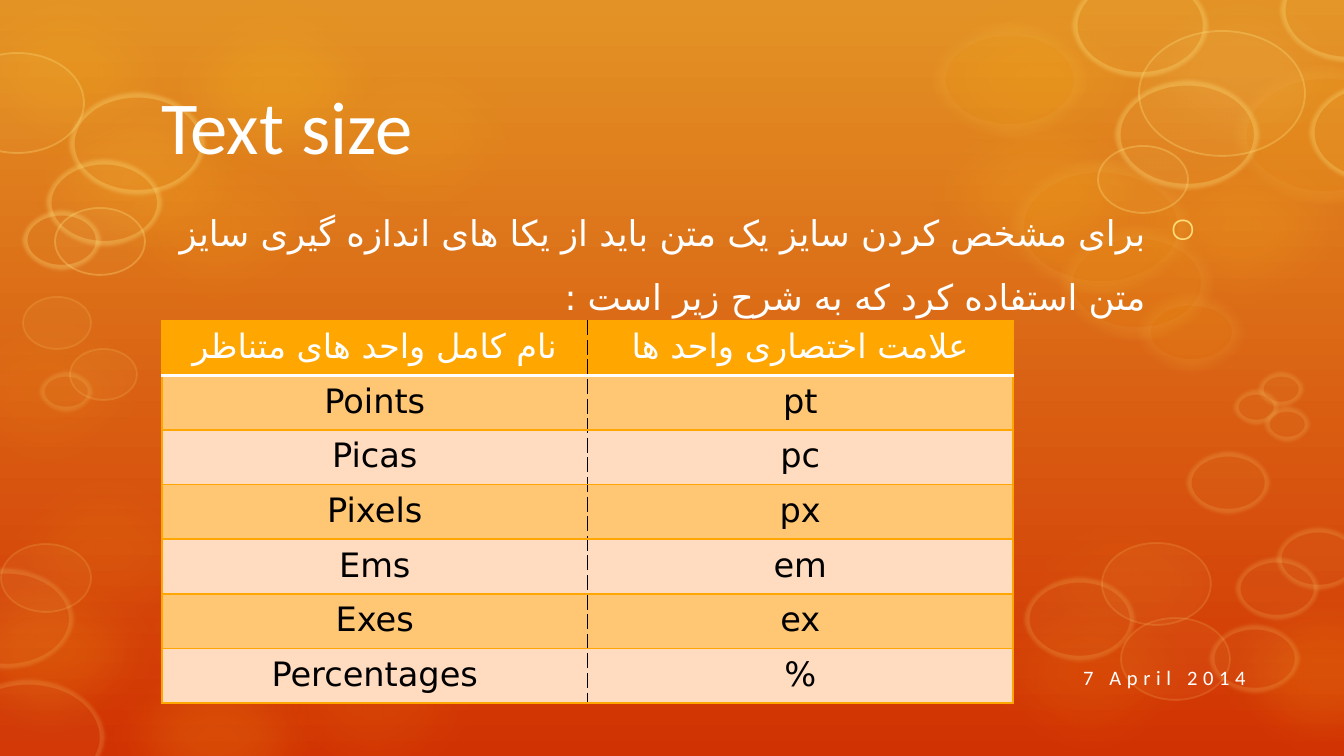
from lxml.etree import SubElement
from pptx import Presentation
from pptx.dml.color import RGBColor
from pptx.enum.shapes import MSO_SHAPE as Shape
from pptx.enum.text import MSO_ANCHOR as Anchor, PP_ALIGN as Align
from pptx.oxml.ns import qn
from pptx.util import Pt

WIDTH, HEIGHT = 1344, 756
SCALE = 9144000 / WIDTH
AMBER, GOLD, PALE, CREAM = "FFA600", "FDC61B", "FFE281", "FEEBAE"
WHITE, BLACK = "FFFFFF", "000000"
LATIN, PERSIAN = "Calibri", "DejaVu Sans"


def px(length):
    return round(length * SCALE)


def color(value):
    return RGBColor.from_string(value)


def add(parent, tag, **attributes):
    return SubElement(parent, qn(tag), attributes)


def fade(fill_parent, percent):
    rgb = next(fill_parent.iter(qn("a:srgbClr")))
    add(rgb, "a:alpha", val=str(percent * 1000))


class BubbleSlide:
    def __init__(self, deck):
        self.slide = deck.slides.add_slide(deck.slide_layouts[6])
        self.shapes = self.slide.shapes

    def background(self, top, bottom):
        fill = self.slide.background.fill
        fill.gradient()
        fill.gradient_angle = 270
        for stop, shade in zip(fill.gradient_stops, (top, bottom)):
            stop.color.rgb = color(shade)

    def bubble(self, box, tint, opacity, edge=None, soft=0):
        bubble = self.shapes.add_shape(Shape.OVAL, *map(px, box))
        bubble.shadow.inherit = False
        bubble.fill.solid()
        bubble.fill.fore_color.rgb = color(tint)
        properties = bubble._element.spPr
        fade(properties.find(qn("a:solidFill")), opacity)
        if edge:
            shade, width, edge_opacity = edge
            bubble.line.color.rgb = color(shade)
            bubble.line.width = Pt(width)
            fade(properties.find(qn("a:ln")), edge_opacity)
        else:
            bubble.line.fill.background()
        if soft:
            add(properties.find(qn("a:effectLst")), "a:softEdge", rad=str(Pt(soft)))

    def style(self, paragraph, size, face, shade, align, rtl=False):
        paragraph.alignment = align
        if rtl:
            paragraph._p.get_or_add_pPr().set("rtl", "1")
        for run in paragraph.runs:
            font = run.font
            font.size, font.name, font.bold = Pt(size), face, False
            font.color.rgb = color(shade)
            add(run._r.get_or_add_rPr(), "a:cs", typeface=face)

    def text(self, words, box, size, face, align, anchor=Anchor.TOP, rtl=False):
        frame = self.shapes.add_textbox(*map(px, box)).text_frame
        frame.word_wrap = True
        frame.vertical_anchor = anchor
        frame.text = words
        paragraph = frame.paragraphs[0]
        self.style(paragraph, size, face, WHITE, align, rtl)
        return paragraph

    def bullet(self, words, box, size):
        paragraph = self.text(words, box, size, PERSIAN, Align.RIGHT, rtl=True)
        paragraph.line_spacing = 1.5
        paragraph.space_after = Pt(6)
        properties = paragraph._p.get_or_add_pPr()
        properties.set("marL", str(px(51)))
        properties.set("indent", str(px(-51)))
        add(add(properties, "a:buClr"), "a:srgbClr", val="FEDD78")
        add(properties, "a:buChar", char="○")

    def border(self, cell, side, shade, width=1, dash="solid"):
        line = add(cell._tc.get_or_add_tcPr(), f"a:ln{side}", w=str(Pt(width)))
        add(add(line, "a:solidFill"), "a:srgbClr", val=shade)
        add(line, "a:prstDash", val=dash)

    def table(self, rows, box, size):
        grid = self.shapes.add_table(len(rows), len(rows[0]), *map(px, box)).table
        grid.first_row = grid.horz_banding = False
        divider, frame, rule = (BLACK, 1, "sysDash"), (AMBER, 1), (WHITE, 1.5)
        for r, row in enumerate(rows):
            for c, words in enumerate(row):
                cell = grid.cell(r, c)
                cell.text = words
                shade = BLACK if r else WHITE
                self.style(cell.text_frame.paragraphs[0], size, PERSIAN, shade,
                           Align.CENTER, rtl=True)
                self.border(cell, "L", *(divider if c else frame))
                self.border(cell, "R", *(frame if c else divider))
                self.border(cell, "T", *(rule if r == 1 else frame))
                self.border(cell, "B", *(frame if r else rule))
                band = "FFC673" if r % 2 else "FFDBC0"
                cell.fill.solid()
                cell.fill.fore_color.rgb = color(band if r else AMBER)


GLOWS = [
    (-34, 446, 8), (77, 121, 10), (276, 31, 10), (77, 632, 16), (-75, -33, 14),
    (136, -17, 20), (0, 73, 15), (899, -29, 10), (1102, 121, 15), (1184, 567, 16),
    (980, 481, 5), (-92, 546, 16), (103, 528, 8), (899, 86, 15), (949, 567, 10),
    (233, 601, 8), (-93, 285, 8),
]
HAZE = [
    (1234, 66, 185, 138), (933, 23, 153, 114), (1011, 160, 179, 134),
    (1060, 226, 153, 114), (1138, 293, 106, 79),
]
RINGS = {
    (1, 30): [
        (-49, 53, 133, 100), (55, 208, 90, 67), (1139, 31, 166, 125),
        (1098, 146, 90, 67),
    ],
    (5, 30): [
        (70, 93, 134, 101), (47, 160, 114, 85), (23, 211, 77, 58),
        (1073, -25, 134, 101), (1281, -40, 134, 101), (1310, 82, 134, 101),
        (1116, 81, 142, 107),
    ],
    (1, 15): [
        (1, 544, 90, 68), (1121, 618, 109, 82), (1102, 543, 109, 82),
        (23, 297, 68, 52), (70, 349, 67, 51),
    ],
    (5, 15): [
        (-47, 680, 151, 114), (-59, 569, 132, 99), (1025, 578, 109, 82),
        (1210, 625, 89, 67), (1187, 452, 82, 61), (1236, 558, 82, 61),
        (1277, 528, 82, 61), (1259, 372, 44, 34), (1234, 390, 44, 34),
        (1265, 407, 44, 34), (40, 372, 52, 39),
    ],
}
UNITS = [
    ("نام کامل واحد های متناظر", "علامت اختصاری واحد ها"),
    ("Points", "pt"),
    ("Picas", "pc"),
    ("Pixels", "px"),
    ("Ems", "em"),
    ("Exes", "ex"),
    ("Percentages", "%"),
]


def main():
    deck = Presentation()
    deck.slide_width, deck.slide_height = px(WIDTH), px(HEIGHT)
    page = BubbleSlide(deck)
    page.background("E39325", "D13202")
    for x, y, opacity in GLOWS:
        page.bubble((x, y, 281, 211), GOLD, opacity, soft=25)
    page.bubble((1102, -33, 281, 211), PALE, 10, soft=25)
    page.bubble((907, 263, 179, 134), GOLD, 10, soft=25)
    for box in HAZE:
        page.bubble(box, GOLD, 10, (CREAM, 14, 6), soft=8)
    for (width, opacity), boxes in RINGS.items():
        for box in boxes:
            page.bubble(box, PALE, 5, (PALE, width, opacity), soft=width // 2)

    page.text("Text size", (148, 74, 1047, 102), 40, LATIN, Align.LEFT, Anchor.MIDDLE)
    date = page.text("7 April 2014", (946, 656, 313, 40), 11, LATIN, Align.RIGHT,
                     Anchor.BOTTOM)
    date.runs[0]._r.get_or_add_rPr().set("spc", "300")
    page.bullet("برای مشخص کردن سایز یک متن باید از یکا های اندازه گیری سایز "
                "متن استفاده کرد که به شرح زیر است :", (163, 183, 1047, 543), 19)
    page.table(UNITS, (162, 321, 851, 382), 18)
    deck.save("out.pptx")


if __name__ == "__main__":
    main()
